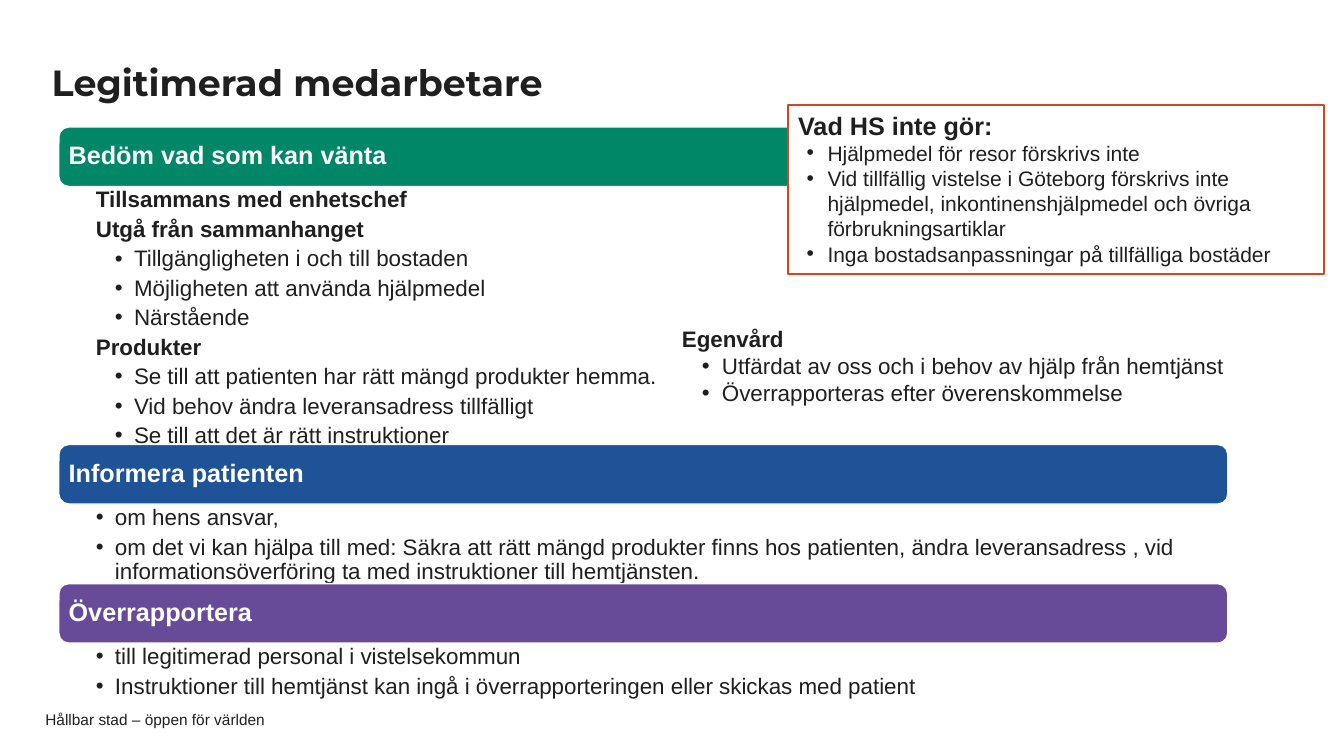
from lxml.etree import SubElement
from pptx import Presentation
from pptx.dml.color import RGBColor
from pptx.enum.shapes import MSO_SHAPE
from pptx.enum.text import MSO_ANCHOR, PP_ALIGN
from pptx.oxml.ns import qn
from pptx.util import Pt

COLORS = {
    "text": "1F1F1F",
    "white": "FFFFFF",
    "green": "008767",
    "blue": "1E5398",
    "purple": "674B99",
    "orange": "D24723",
}


def set_up_frame(shape, insets, anchor=MSO_ANCHOR.TOP):
    """Wrap the text; insets are left, top, right, bottom in points."""
    frame = shape.text_frame
    frame.word_wrap = True
    frame.vertical_anchor = anchor
    frame.margin_left, frame.margin_top, frame.margin_right, frame.margin_bottom = map(Pt, insets)
    return frame


def add_line(frame, text, size, bold=False, color="text", font="Arial",
             indent=0, hanging=0, bullet=False, spacing=None, after=0):
    """Fill the frame's empty first paragraph, or append a new one."""
    first = frame.paragraphs[0]
    paragraph = frame.add_paragraph() if first.runs else first
    properties = paragraph._p.get_or_add_pPr()
    properties.set("marL", str(Pt(indent)))
    properties.set("indent", str(-Pt(hanging)))
    if bullet:
        SubElement(properties, qn("a:buFont"), typeface="Arial")
        SubElement(properties, qn("a:buChar"), char="•")
    paragraph.alignment = PP_ALIGN.LEFT
    paragraph.line_spacing = spacing
    paragraph.space_after = Pt(after)
    run = paragraph.add_run()
    run.text = text
    run.font.size = Pt(size)
    run.font.bold = bold
    run.font.name = font
    run.font.color.rgb = RGBColor.from_string(COLORS[color])


presentation = Presentation()
presentation.slide_width = Pt(960)
presentation.slide_height = Pt(540)
slide = presentation.slides.add_slide(presentation.slide_layouts[6])
shapes = slide.shapes

# Footer and title
footer = shapes.add_textbox(Pt(32.4), Pt(508.3), Pt(680), Pt(11.5))
add_line(set_up_frame(footer, (0, 0, 0, 0), MSO_ANCHOR.MIDDLE),
         "Hållbar stad – öppen för världen", 11)

title = shapes.add_textbox(Pt(22.5), Pt(31.7), Pt(731.5), Pt(58.3))
add_line(set_up_frame(title, (14.4, 14.4, 14.4, 14.4), MSO_ANCHOR.MIDDLE),
         "Legitimerad medarbetare", 26, bold=True, font="Montserrat", spacing=0.9)

# Stacked sections: heading, colour, body height, lines as (level, bulleted, text)
sections = [
    ("Bedöm vad som kan vänta", "green", 184.3, [
        (1, False, "Tillsammans med enhetschef"),
        (1, False, "Utgå från sammanhanget"),
        (2, True, "Tillgängligheten i och till bostaden"),
        (2, True, "Möjligheten att använda hjälpmedel"),
        (2, True, "Närstående"),
        (1, False, "Produkter"),
        (2, True, "Se till att patienten har rätt mängd produkter hemma."),
        (2, True, "Vid behov ändra leveransadress tillfälligt"),
        (2, True, "Se till att det är rätt instruktioner"),
    ]),
    ("Informera patienten", "blue", 56.9, [
        (1, True, "om hens ansvar,"),
        (1, True, "om det vi kan hjälpa till med: Säkra att rätt mängd produkter finns hos "
                  "patienten, ändra leveransadress , vid informationsöverföring ta med "
                  "instruktioner till hemtjänsten."),
    ]),
    ("Överrapportera", "purple", 40.3, [
        (1, True, "till legitimerad personal i vistelsekommun"),
        (1, True, "Instruktioner till hemtjänst kan ingå i överrapporteringen eller skickas "
                  "med patient"),
    ]),
]
SECTION_LEFT, SECTION_WIDTH, BAND_HEIGHT, STEP = 42, 835, 42.5, 13.6
top = 90.7
for heading, color, body_height, lines in sections:
    band = shapes.add_shape(MSO_SHAPE.ROUNDED_RECTANGLE, Pt(SECTION_LEFT), Pt(top),
                            Pt(SECTION_WIDTH), Pt(BAND_HEIGHT))
    band.shadow.inherit = False
    band.fill.solid()
    band.fill.fore_color.rgb = RGBColor.from_string(COLORS[color])
    band.line.color.rgb = RGBColor.from_string(COLORS["white"])
    band.line.width = Pt(1)
    add_line(set_up_frame(band, (5, 5, 5, 5), MSO_ANCHOR.MIDDLE),
             heading, 18, bold=True, color="white", spacing=0.9)
    top += BAND_HEIGHT

    body = shapes.add_textbox(Pt(SECTION_LEFT), Pt(top), Pt(SECTION_WIDTH), Pt(body_height))
    body_frame = set_up_frame(body, (26.5, 1.6, 8.9, 1.6))
    for level, bulleted, text in lines:
        add_line(body_frame, text, 16, bold=not bulleted, indent=level * STEP,
                 hanging=STEP, bullet=bulleted, spacing=0.9, after=3.8)
    top += body_height

# Framed box with the exceptions
exceptions = shapes.add_shape(MSO_SHAPE.RECTANGLE, Pt(563), Pt(75), Pt(383), Pt(120.5))
exceptions.shadow.inherit = False
exceptions.fill.solid()
exceptions.fill.fore_color.rgb = RGBColor.from_string(COLORS["white"])
exceptions.line.color.rgb = RGBColor.from_string(COLORS["orange"])
exceptions.line.width = Pt(1.5)
exceptions_frame = set_up_frame(exceptions, (7.2, 3.6, 7.2, 3.6))
add_line(exceptions_frame, "Vad HS inte gör:", 18, bold=True)
for text in (
    "Hjälpmedel för resor förskrivs inte",
    "Vid tillfällig vistelse i Göteborg förskrivs inte hjälpmedel, "
    "inkontinenshjälpmedel och övriga förbrukningsartiklar",
    "Inga bostadsanpassningar på tillfälliga bostäder",
):
    add_line(exceptions_frame, text, 15, indent=21, hanging=15, bullet=True)

# Self-care
self_care = shapes.add_textbox(Pt(480), Pt(229), Pt(438.5), Pt(82))
self_care_frame = set_up_frame(self_care, (7.2, 3.6, 7.2, 3.6))
add_line(self_care_frame, "Egenvård", 16, bold=True)
for text in (
    "Utfärdat av oss och i behov av hjälp från hemtjänst",
    "Överrapporteras efter överenskommelse",
):
    add_line(self_care_frame, text, 16, indent=28.6, hanging=14.3, bullet=True)

presentation.save("out.pptx")
